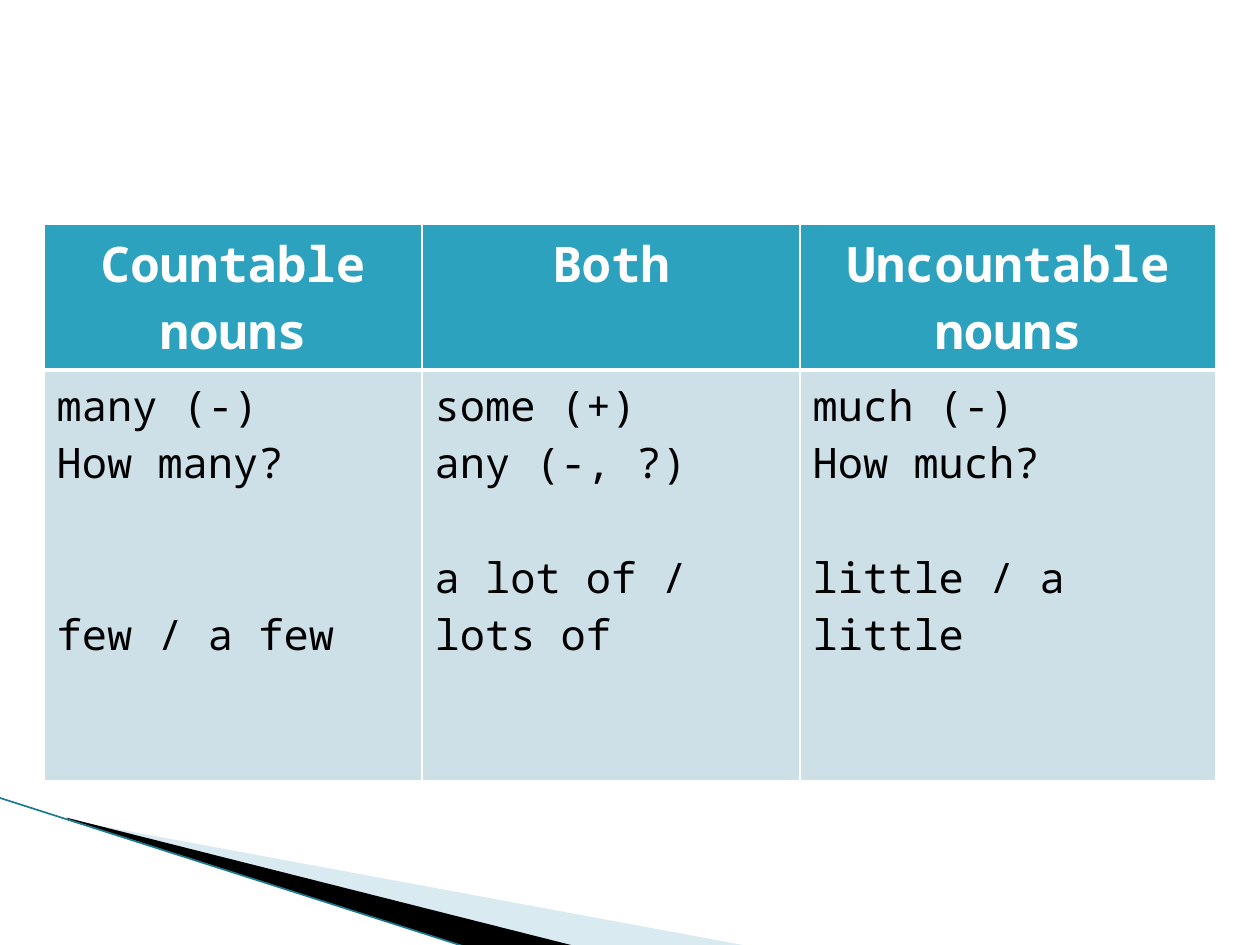
from dataclasses import dataclass

from lxml import etree
from pptx import Presentation
from pptx import util as u
from pptx.dml.color import RGBColor
from pptx.enum import shapes, text
from pptx.oxml.ns import qn


@dataclass(frozen=True)
class Theme:
    font: str = "Noto Sans Mono"
    head_size: int = 28
    body_size: int = 24
    line_gap: float = 32.7
    white: str = "FFFFFF"
    black: str = "000000"
    head_fill: str = "2DA2BF"
    body_fill: str = "CDE0E8"
    wedge: str = "A0CBDC"
    edge: str = "1C7A90"


THEME = Theme()
COL_WIDTHS = (3, 3, 3.3)
ROW_HEIGHTS = (0.91, 3.26)
COLUMNS = [
    ("Countable nouns", ["many (-)", "How many?", "few / a few"], 2),
    ("Both", ["some (+)", "any (-, ?)", "a lot of / lots of"], 1),
    ("Uncountable nouns", ["much (-)", "How much?", "little / a little"], 1),
]


def rgb(color):
    return RGBColor.from_string(color)


def add_wedge(slide, points, color, opacity=100):
    pts = [(u.Inches(x), u.Inches(y)) for x, y in points]
    fb = slide.shapes.build_freeform(*pts[0])
    fb.add_line_segments(pts[1:], close=True)
    sp = fb.convert_to_shape()
    sp.shadow.inherit = False
    sp.line.fill.background()
    sp.fill.solid()
    sp.fill.fore_color.rgb = rgb(color)
    if opacity < 100:
        clr = sp.fill._xPr.find(".//" + qn("a:srgbClr"))
        etree.SubElement(clr, qn("a:alpha"), val=str(opacity * 1000))


def add_line(slide, start, end, color, width):
    ends = [u.Inches(v) for v in (*start, *end)]
    line = slide.shapes.add_connector(shapes.MSO_CONNECTOR.STRAIGHT, *ends)
    line.line.color.rgb = rgb(color)
    line.line.width = u.Pt(width)
    etree.SubElement(line._element.spPr, qn("a:effectLst"))


def set_borders(cell, **widths):
    tcPr = cell._tc.get_or_add_tcPr()
    for i, side in enumerate("LRTB"):
        width = u.Pt(widths.get(side, 1))
        ln = etree.Element(qn("a:ln" + side), w=str(width))
        fill = etree.SubElement(ln, qn("a:solidFill"))
        etree.SubElement(fill, qn("a:srgbClr"), val=THEME.white)
        tcPr.insert(i, ln)


def fill_cell(cell, lines, fill, size, color, bold=False, align=None):
    cell.fill.solid()
    cell.fill.fore_color.rgb = rgb(fill)
    tf = cell.text_frame
    tf.text = "\n".join(lines)
    for p in tf.paragraphs:
        p.alignment = align
        for r in p.runs:
            r.font.name = THEME.font
            r.font.size = u.Pt(size)
            r.font.bold = bold
            r.font.color.rgb = rgb(color)


def add_noun_table(slide):
    box = [u.Inches(v) for v in (0.35, 1.78, sum(COL_WIDTHS), sum(ROW_HEIGHTS))]
    table = slide.shapes.add_table(len(ROW_HEIGHTS), len(COLUMNS), *box).table
    for row, height in zip(table.rows, ROW_HEIGHTS):
        row.height = u.Inches(height)
    for i, (heading, lines, gap) in enumerate(COLUMNS):
        table.columns[i].width = u.Inches(COL_WIDTHS[i])
        head, body = table.cell(0, i), table.cell(1, i)
        fill_cell(head, [heading], THEME.head_fill, THEME.head_size,
                  THEME.white, bold=True, align=text.PP_ALIGN.CENTER)
        fill_cell(body, lines, THEME.body_fill, THEME.body_size, THEME.black)
        body.text_frame.paragraphs[-1].space_before = u.Pt(gap * THEME.line_gap)
        set_borders(head, B=3)
        set_borders(body, T=3)


def main():
    prs = Presentation()
    prs.slide_width, prs.slide_height = u.Inches(10), u.Inches(7.5)
    slide = prs.slides.add_slide(prs.slide_layouts[6])
    add_wedge(slide, [(0.55, 6.51), (5.95, 7.51), (4.56, 7.51), (0.55, 6.5)],
              THEME.wedge, opacity=40)
    add_wedge(slide, [(0.53, 6.49), (4.57, 7.51), (3.72, 7.52), (0.54, 6.5)],
              THEME.black)
    add_line(slide, (-0.01, 6.33), (3.71, 7.52), THEME.edge, 0.95)
    add_noun_table(slide)
    prs.save("out.pptx")


if __name__ == "__main__":
    main()
